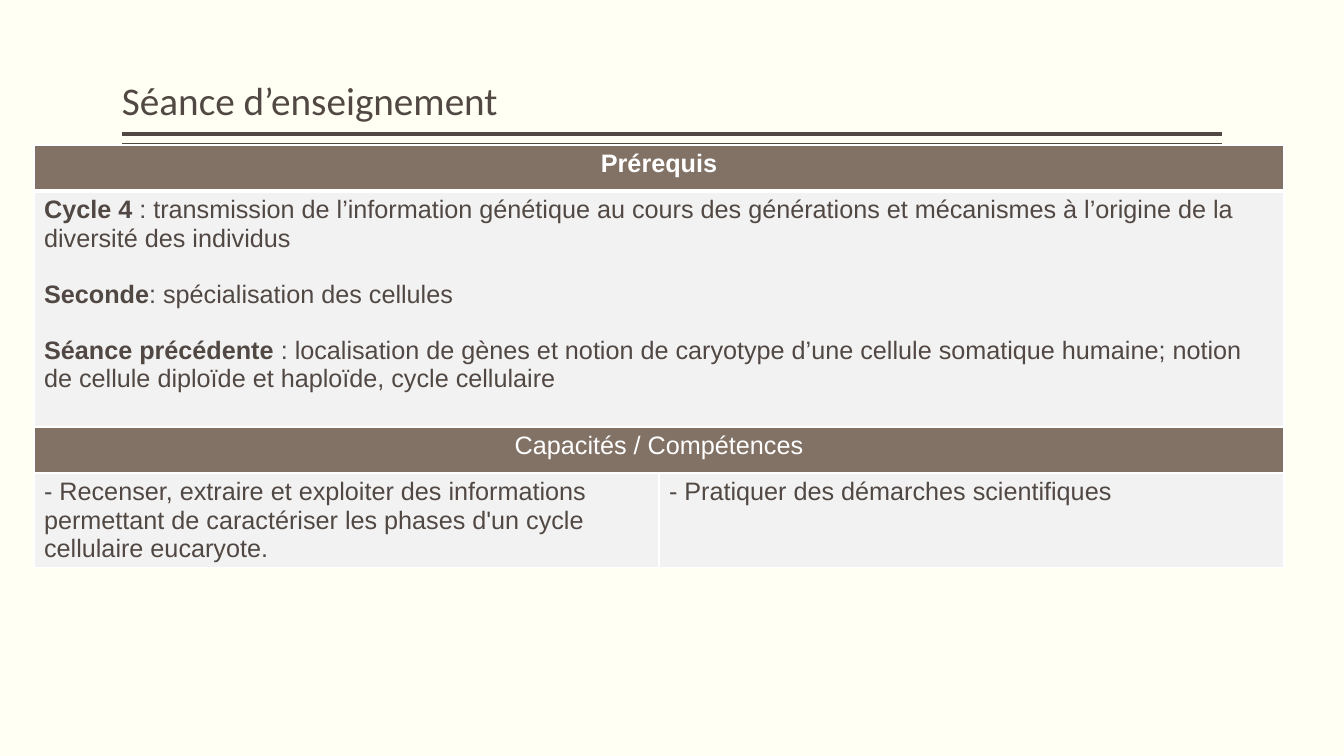
from lxml import etree
from pptx import Presentation
from pptx import util as u
from pptx.dml.color import RGBColor
from pptx.enum import shapes, text
from pptx.oxml import ns

PX = 914400 / 100.8
THEME = {
    "paper": RGBColor.from_string("FFFFF3"),
    "ink": RGBColor.from_string("514843"),
    "white": RGBColor.from_string("FFFFFF"),
    "band": RGBColor.from_string("827266"),
    "panel": RGBColor.from_string("F2F2F2"),
    "title": u.Pt(28),
    "body": u.Pt(18),
    "gap": u.Pt(20),
}


def px(*lengths):
    return [u.Emu(round(n * PX)) for n in lengths]


def add_run(p, words, color, **fmt):
    r = p.add_run()
    r.text = words
    for name, value in fmt.items():
        setattr(r.font, name, value)
    r.font.color.rgb = THEME[color]


prs = Presentation()
prs.slide_width, prs.slide_height = px(1344, 756)
s = prs.slides.add_slide(prs.slide_layouts[5])
s.background.fill.solid()
s.background.fill.fore_color.rgb = THEME["paper"]

# Title
title = s.shapes.title
title.left, title.top, title.width, title.height = px(122, 8, 1100, 121)
tf = title.text_frame
frame = {"margin_left": 0, "margin_right": 0, "word_wrap": True,
         "auto_size": text.MSO_AUTO_SIZE.NONE,
         "vertical_anchor": text.MSO_ANCHOR.BOTTOM}
for name, value in frame.items():
    setattr(tf, name, value)
p = tf.paragraphs[0]
p.alignment = text.PP_ALIGN.LEFT
p.line_spacing = 0.9
add_run(p, "Séance d’enseignement", "ink", name="Calibri", size=THEME["title"])

# Double rule under the title
for y, weight in ((134, 3), (144, 1)):
    rule = s.shapes.add_connector(shapes.MSO_CONNECTOR.STRAIGHT, *px(1222, y, 122, y))
    rule.line.color.rgb = THEME["ink"]
    rule.line.width = u.Pt(weight)
    etree.SubElement(rule._element.spPr, ns.qn("a:effectLst"))

# Table: each cell is a list of paragraphs, each paragraph a (bold, plain) pair
rows = [
    (46, "band", [[("Prérequis", "")]]),
    (236, "panel", [[
        ("Cycle 4 ", ": transmission de l’information génétique au cours des "
                     "générations et mécanismes à l’origine de la diversité des individus"),
        ("Seconde", ": spécialisation des cellules"),
        ("Séance précédente ", ": localisation de gènes et notion de caryotype d’une "
                               "cellule somatique humaine; notion de cellule diploïde "
                               "et haploïde, cycle cellulaire"),
    ]]),
    (46, "band", [[("", "Capacités / Compétences")]]),
    (94, "panel", [
        [("", "- Recenser, extraire et exploiter des informations permettant de "
              "caractériser les phases d'un cycle cellulaire eucaryote.")],
        [("", "- Pratiquer des démarches scientifiques")],
    ]),
]
height = sum(row[0] for row in rows)
table = s.shapes.add_table(len(rows), 2, *px(34, 145, 1250, height)).table
table.first_row = table.horz_banding = False
for column in table.columns:
    column.width = px(625)[0]

for i, (row_height, fill, cells) in enumerate(rows):
    table.rows[i].height = px(row_height)[0]
    if len(cells) == 1:
        table.cell(i, 0).merge(table.cell(i, 1))

    # Borders and fill, with a thick line between the first two rows
    for cell in table.rows[i].cells:
        tcPr = cell._tc.get_or_add_tcPr()
        for side in "LRTB":
            thick = (i, side) in ((0, "B"), (1, "T"))
            ln = etree.SubElement(tcPr, ns.qn(f"a:ln{side}"), w=str(u.Pt(3 if thick else 1)))
            solid = etree.SubElement(ln, ns.qn("a:solidFill"))
            etree.SubElement(solid, ns.qn("a:srgbClr"), val=str(THEME["white"]))
        cell.fill.solid()
        cell.fill.fore_color.rgb = THEME[fill]

    # Wording
    for j, paragraphs in enumerate(cells):
        tf = table.cell(i, j).text_frame
        for k, pair in enumerate(paragraphs):
            p = tf.add_paragraph() if k else tf.paragraphs[0]
            if k:
                p.space_before = THEME["gap"]
            if fill == "band":
                p.alignment = text.PP_ALIGN.CENTER
            for words, bold in zip(pair, (True, False)):
                if words:
                    add_run(p, words, "white" if fill == "band" else "ink",
                            name="Arial", size=THEME["body"], bold=bold)

prs.save("out.pptx")
